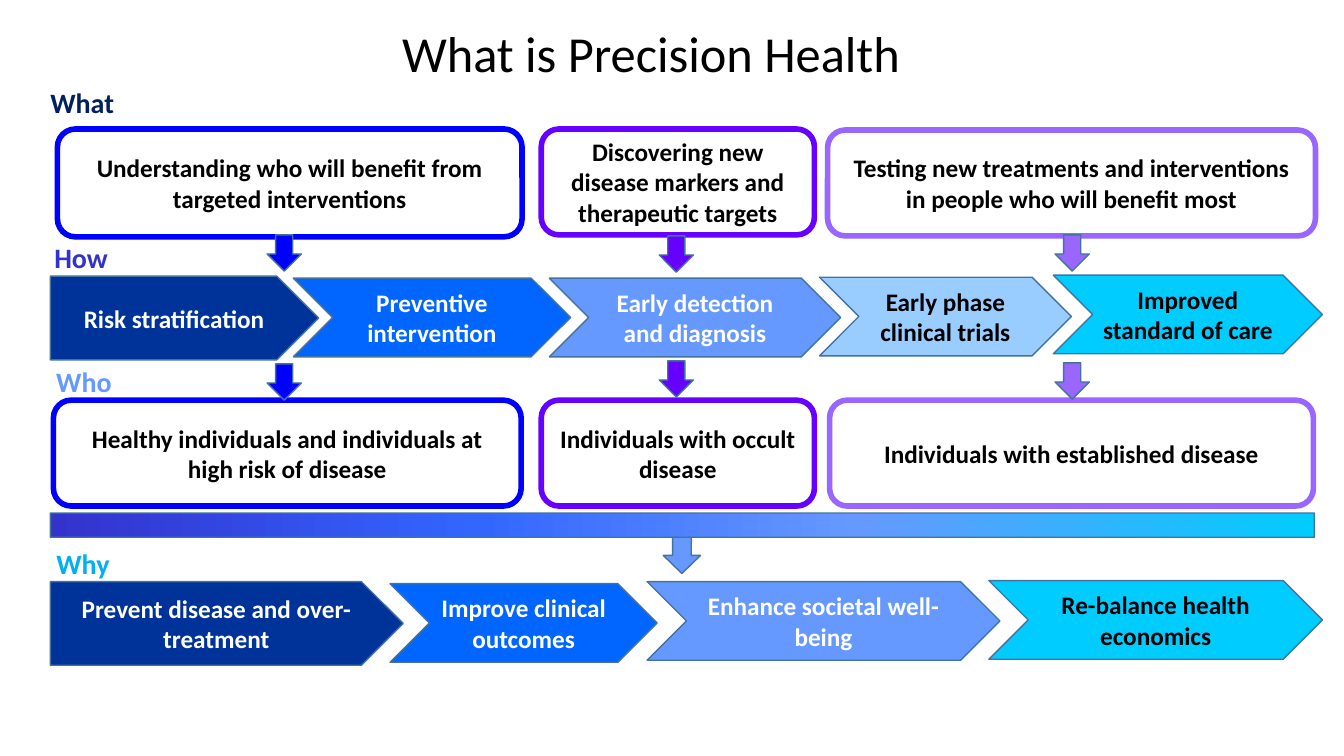
from lxml.etree import SubElement
from pptx import Presentation
from pptx.dml.color import RGBColor as RGB
from pptx.enum.shapes import MSO_SHAPE as Form
from pptx.enum.text import MSO_ANCHOR as Anchor, MSO_AUTO_SIZE as Fit, PP_ALIGN as Align
from pptx.oxml.ns import qn
from pptx.util import Inches, Pt

BLACK = RGB(0x00, 0x00, 0x00)
WHITE = RGB(0xFF, 0xFF, 0xFF)
EDGE = RGB(0x43, 0x73, 0x9E)
NAVY = RGB(0x00, 0x33, 0x99)
AZURE = RGB(0x00, 0x66, 0xFF)
SKY = RGB(0x66, 0x99, 0xFF)
PALE = RGB(0x99, 0xCC, 0xFF)
CYAN = RGB(0x00, 0xCC, 0xFF)
BLUE = RGB(0x00, 0x00, 0xFF)
VIOLET = RGB(0x66, 0x00, 0xFF)
LILAC = RGB(0x99, 0x66, 0xFF)
INDIGO = RGB(0x33, 0x33, 0xCC)
ROYAL = RGB(0x33, 0x66, 0xFF)
INK = RGB(0x00, 0x20, 0x60)
AQUA = RGB(0x00, 0xB0, 0xF0)

COLS, ROWS = 160, 90
WIDE, HIGH = Inches(13.33), Inches(7.5)


class Board:
    """Holds the slide and its style; places are in columns and rows."""
    font = "Calibri"

    def __init__(self, slide):
        self.slide = slide

    def grid(self, x, y, w, h):
        return (round(x * WIDE / COLS), round(y * HIGH / ROWS),
                round(w * WIDE / COLS), round(h * HIGH / ROWS))

    def letter(self, shape, text, size, ink, bold=True, align=Align.CENTER):
        """Add one styled run to the shape and return its paragraph."""
        par = shape.text_frame.paragraphs[0]
        par.alignment = align
        run = par.add_run()
        run.text = text
        run.font.name, run.font.size = self.font, Pt(size)
        run.font.bold, run.font.color.rgb = bold, ink
        return par

    def title(self, text, place):
        head = self.slide.shapes.title
        head.left, head.top, head.width, head.height = self.grid(*place)
        head.text_frame.auto_size = Fit.NONE
        head.text_frame.vertical_anchor = Anchor.BOTTOM
        self.letter(head, text, 36, BLACK, False).line_spacing = 0.9

    def label(self, text, ink, x, y, w):
        box = self.slide.shapes.add_textbox(*self.grid(x, y, w, 5.28))
        box.text_frame.word_wrap = False
        box.text_frame.auto_size = Fit.SHAPE_TO_FIT_TEXT
        self.letter(box, text, 20, ink, align=Align.LEFT)

    def shape(self, form, place, fill=None, line=EDGE, width=1, text="", ink=BLACK):
        item = self.slide.shapes.add_shape(form, *self.grid(*place))
        item.shadow.inherit = False
        if fill is None:
            item.fill.background()
        else:
            item.fill.solid()
            item.fill.fore_color.rgb = fill
        item.line.color.rgb, item.line.width = line, Pt(width)
        if text:
            item.text_frame.word_wrap = True
            item.text_frame.vertical_anchor = Anchor.MIDDLE
            self.letter(item, text, 18, ink)
        return item

    def card(self, text, hue, *place):
        self.shape(Form.ROUNDED_RECTANGLE, place, line=hue, width=4, text=text)

    def arrow(self, hue, x, y, w=4.08):
        self.shape(Form.DOWN_ARROW, (x, y, w, 4.32), hue)

    def chain(self, steps):
        """Draw a row of steps: a pentagon first, then slimmer chevrons."""
        for i, (text, fill, ink, x, y, w) in enumerate(steps):
            form, tall = (Form.CHEVRON, 9.36) if i else (Form.PENTAGON, 9.96)
            self.shape(form, (x, y, w, tall), fill, text=text, ink=ink)

    def band(self, stops, *place):
        """Draw the callout bar with a left-to-right gradient."""
        bar = self.shape(Form.DOWN_ARROW_CALLOUT, place)
        bar.fill.gradient()
        bar.fill.gradient_angle = 0
        ramp = bar._element.spPr.find(qn("a:gradFill")).find(qn("a:gsLst"))
        for old in list(ramp):
            ramp.remove(old)
        for share, hue in stops:
            stop = SubElement(ramp, qn("a:gs"), pos=str(share * 1000))
            SubElement(stop, qn("a:srgbClr"), val=str(hue))


def main():
    deck = Presentation()
    deck.slide_width, deck.slide_height = WIDE, HIGH
    slide = deck.slides.add_slide(deck.slide_layouts[0])
    sub = slide.placeholders[1]._element
    sub.getparent().remove(sub)
    board = Board(slide)

    board.title("What is Precision Health", (17.52, 2.4, 120, 8.16))

    board.chain([
        ("Risk stratification", NAVY, WHITE, 6, 32.88, 31.92),
        ("Preventive intervention", AZURE, WHITE, 34.92, 33.12, 33),
        ("Early detection and diagnosis", SKY, WHITE, 65.4, 33.12, 34.68),
        ("Early phase clinical trials", PALE, BLACK, 97.56, 33, 30),
        ("Improved standard of care", CYAN, BLACK, 125.4, 32.76, 32.04),
    ])

    for text, hue, *place in [
        ("Understanding who will benefit from targeted interventions",
         BLUE, 6.84, 15.36, 55.32, 12.84),
        ("Discovering new disease markers and therapeutic targets",
         VIOLET, 64.44, 15.36, 32.52, 12.6),
        ("Testing new treatments and interventions in people who will benefit most",
         LILAC, 98.52, 15.48, 58.08, 12.6),
        ("Healthy individuals and individuals at high risk of disease",
         BLUE, 6.36, 47.64, 55.68, 12.6),
        ("Individuals with occult disease", VIOLET, 64.44, 47.64, 32.52, 12.6),
        ("Individuals with established disease", LILAC, 98.76, 47.64, 57.6, 12.6),
    ]:
        board.card(text, hue, *place)

    for hue, x, *tops in [(BLUE, 31.8, 27.96, 43.32),
                          (VIOLET, 78.48, 28.08, 42.96),
                          (LILAC, 125.6, 27.96, 43.2)]:
        for y in tops:
            board.arrow(hue, x, y)

    board.chain([
        ("Prevent disease and over-treatment", NAVY, WHITE, 6, 69.24, 42),
        ("Improve clinical outcomes", AZURE, WHITE, 46.44, 69.48, 31.8),
        ("Enhance societal well-being", SKY, WHITE, 77.04, 69.24, 42),
        ("Re-balance health economics", CYAN, BLACK, 117.72, 69.12, 39.72),
    ])

    board.band([(0, INDIGO), (34, ROYAL), (64, SKY), (100, CYAN)],
               6, 61.08, 150.48, 4.44)
    board.arrow(SKY, 78.96, 63.96, 4.44)

    board.label("What", INK, 4.8, 9.6, 10.08)
    board.label("How", INDIGO, 5.28, 28.08, 8.88)
    board.label("Who", SKY, 5.52, 42.84, 9.12)
    board.label("Why", AQUA, 5.52, 64.44, 8.88)

    deck.save("out.pptx")


if __name__ == "__main__":
    main()
